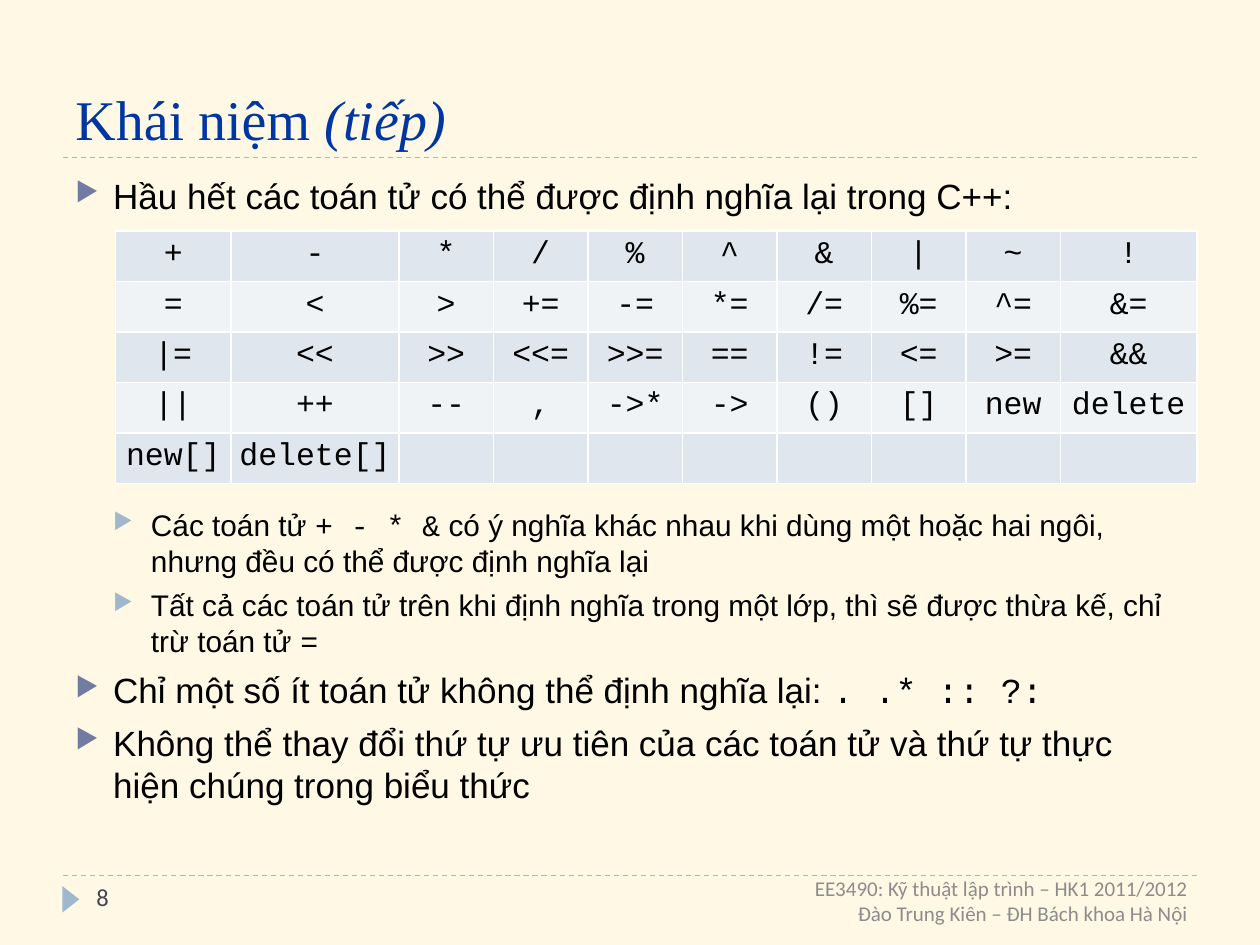
from lxml.etree import SubElement
from pptx import Presentation
from pptx.dml.color import RGBColor
from pptx.enum.dml import MSO_LINE
from pptx.enum.shapes import MSO_CONNECTOR, MSO_SHAPE
from pptx.enum.text import MSO_ANCHOR, PP_ALIGN
from pptx.oxml.ns import qn
from pptx.util import Inches, Pt

CREAM = RGBColor(0xFE, 0xF8, 0xE4)
NAVY = RGBColor(0x00, 0x36, 0xA2)
BLACK = RGBColor(0x00, 0x00, 0x00)
WHITE = RGBColor(0xFF, 0xFF, 0xFF)
SLATE = RGBColor(0x46, 0x46, 0x53)
GRAY = RGBColor(0x8C, 0x8C, 0x8C)
INDIGO = RGBColor(0x72, 0x7C, 0xA3)
SKY = RGBColor(0x9F, 0xB8, 0xCD)
BANDS = (RGBColor(0xDF, 0xE6, 0xED), RGBColor(0xF0, 0xF3, 0xF6))

SERIF, SANS, MONO, SMALL = "Times New Roman", "Arial", "Courier New", "Calibri"

# Bullet levels: text size, bullet colour, space before
LEVELS = ((20, INDIGO, 6), (17, SKY, 5))
TABLE_GAP = 166  # points left free for the table inside the list

OPERATORS = [row.split() for row in (
    "+ - * / % ^ & | ~ !",
    "= < > += -= *= /= %= ^= &=",
    "|= << >> <<= >>= == != <= >= &&",
    "|| ++ -- , ->* -> () [] new delete",
    "new[] delete[]",
)]
TABLE_COLUMNS = [11, 16] + [9] * 7 + [13]

# Level, then (text, font) spans
POINTS = [
    (0, [("Hầu hết các toán tử có thể được định nghĩa lại trong C++:", SANS)]),
    (1, [("Các toán tử ", SANS), ("+ - * &", MONO),
         (" có ý nghĩa khác nhau khi dùng một hoặc hai ngôi, "
          "nhưng đều có thể được định nghĩa lại", SANS)]),
    (1, [("Tất cả các toán tử trên khi định nghĩa trong một lớp, "
          "thì sẽ được thừa kế, chỉ trừ toán tử ", SANS), ("=", MONO)]),
    (0, [("Chỉ một số ít toán tử không thể định nghĩa lại: ", SANS),
         (". .* :: ?:", MONO)]),
    (0, [("Không thể thay đổi thứ tự ưu tiên của các toán tử và thứ tự thực "
          "hiện chúng trong biểu thức", SANS)]),
]


def grid(*units):
    """Turn grid columns or rows, twelve to the inch, into lengths."""
    return [Inches(unit / 12) for unit in units]


def set_font(font, size, name, color):
    font.size, font.name = Pt(size), name
    font.color.rgb = color


class SlideBuilder:
    def __init__(self, deck):
        self.page = deck.slides.add_slide(deck.slide_layouts[6])
        fill = self.page.background.fill
        fill.solid()
        fill.fore_color.rgb = CREAM

    def rule(self, row):
        line = self.page.shapes.add_connector(
            MSO_CONNECTOR.STRAIGHT, *grid(6, row, 114, row))
        line.line.color.rgb = SKY
        line.line.width = Pt(0.75)
        line.line.dash_style = MSO_LINE.DASH
        SubElement(line._element.spPr, qn("a:effectLst"))

    def marker(self, *place):
        shape = self.page.shapes.add_shape(
            MSO_SHAPE.ISOSCELES_TRIANGLE, *grid(*place))
        shape.rotation = 90
        shape.shadow.inherit = False
        shape.fill.solid()
        shape.fill.fore_color.rgb = SKY
        shape.line.fill.background()

    def frame(self, place, anchor=MSO_ANCHOR.TOP):
        frame = self.page.shapes.add_textbox(*grid(*place)).text_frame
        frame.word_wrap = True
        frame.vertical_anchor = anchor
        return frame

    def text(self, place, lines, size, name, color,
             align=PP_ALIGN.LEFT, anchor=MSO_ANCHOR.TOP):
        """Each line is a list of (text, italic) spans."""
        frame = self.frame(place, anchor)
        for index, spans in enumerate(lines):
            para = frame.add_paragraph() if index else frame.paragraphs[0]
            para.alignment = align
            set_font(para.font, size, name, color)
            for content, italic in spans:
                span = para.add_run()
                span.text = content
                if italic:
                    span.font.italic = True

    def bullets(self, place, points):
        frame = self.frame(place)
        for index, (level, spans) in enumerate(points):
            size, color, space = LEVELS[level]
            para = frame.add_paragraph() if index else frame.paragraphs[0]
            para.level = level
            if index:
                para.space_before = Pt(TABLE_GAP if index == 1 else space)
            props = para._p.get_or_add_pPr()
            props.set("marL", str(Inches(0.3 * (level + 1))))
            props.set("indent", str(-Inches(0.3)))
            tint = SubElement(props, qn("a:buClr"))
            SubElement(tint, qn("a:srgbClr"), val=str(color))
            SubElement(props, qn("a:buSzPct"), val="76000")
            SubElement(props, qn("a:buChar"), char="▶")
            set_font(para.font, size, SANS, BLACK)
            for content, name in spans:
                span = para.add_run()
                span.text = content
                if name != SANS:
                    span.font.name = name

    def table(self, left, top, widths, row_height, rows):
        table = self.page.shapes.add_table(
            len(rows), len(widths),
            *grid(left, top, sum(widths), row_height * len(rows))).table
        table.first_row = table.horz_banding = False
        for column, width in zip(table.columns, grid(*widths)):
            column.width = width
        for index, values in enumerate(rows):
            table.rows[index].height = grid(row_height)[0]
            for column in range(len(widths)):
                content = values[column] if column < len(values) else ""
                self.cell(table.cell(index, column), content, BANDS[index % 2])

    def cell(self, cell, content, color):
        cell.margin_left = cell.margin_right = Inches(0.05)
        cell.margin_top = cell.margin_bottom = Inches(0.05)
        props = cell._tc.get_or_add_tcPr()
        for side in ("lnL", "lnR", "lnT", "lnB"):
            edge = SubElement(props, qn("a:" + side), w=str(Pt(1)))
            paint = SubElement(edge, qn("a:solidFill"))
            SubElement(paint, qn("a:srgbClr"), val=str(WHITE))
        cell.fill.solid()
        cell.fill.fore_color.rgb = color
        para = cell.text_frame.paragraphs[0]
        para.alignment = PP_ALIGN.CENTER
        set_font(para.font, 18, MONO, BLACK)
        if content:
            para.add_run().text = content


def main():
    deck = Presentation()
    deck.slide_width, deck.slide_height = grid(120, 90)
    slide = SlideBuilder(deck)

    # Rules and page marker
    slide.rule(83.4)
    slide.rule(15)
    slide.marker(5.5, 84.85, 2.5, 1.6)

    # Title and list
    slide.text((6, 2, 108, 13), [[("Khái niệm ", False), ("(tiếp)", True)]],
               32, SERIF, NAVY, anchor=MSO_ANCHOR.BOTTOM)
    slide.bullets((6, 16, 108, 64.8), POINTS)

    # Footer
    slide.text((8, 83.4, 26, 4.8), [[("8", False)]], 14, SMALL, SLATE)
    slide.text((41, 83.4, 73.3, 4.8),
               [[("EE3490: Kỹ thuật lập trình – HK1 2011/2012", False)],
                [("Đào Trung Kiên – ĐH Bách khoa Hà Nội", False)]],
               12, SMALL, GRAY, PP_ALIGN.RIGHT, MSO_ANCHOR.MIDDLE)

    # Operator table
    slide.table(11, 22, TABLE_COLUMNS, 4.6, OPERATORS)

    deck.save("out.pptx")


if __name__ == "__main__":
    main()
